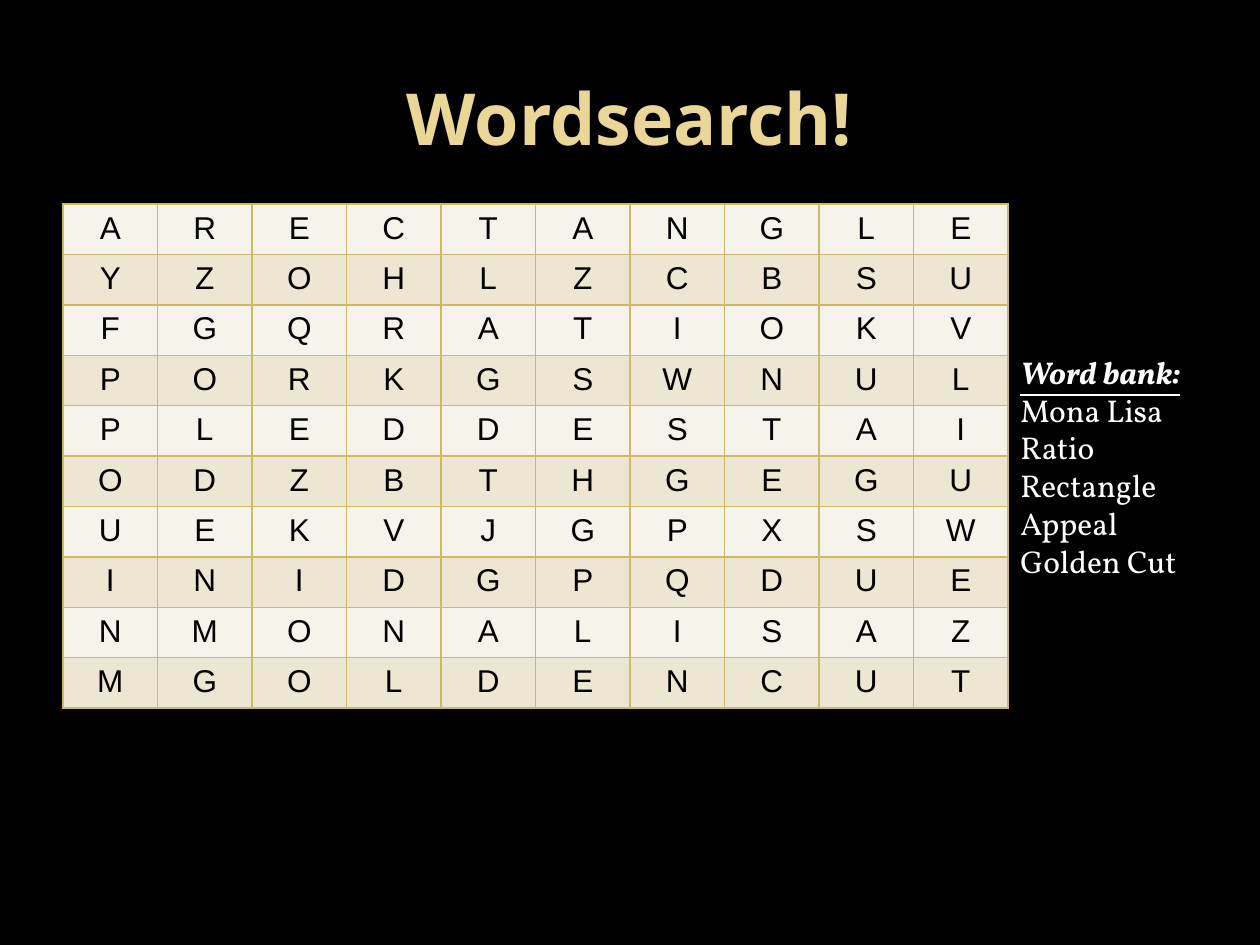
from dataclasses import dataclass

from lxml.etree import SubElement
from pptx import Presentation
from pptx.dml.color import RGBColor
from pptx.enum.text import MSO_ANCHOR as Anchor, MSO_AUTO_SIZE as AutoSize, PP_ALIGN as Align
from pptx.oxml.ns import qn
from pptx.util import Pt


@dataclass(frozen=True)
class Theme:
    background: str = "000000"
    title: str = "EAD696"
    text: str = "FFFFFF"
    letter: str = "000000"
    border: str = "CEB966"
    bands: tuple = ("F6F3EA", "EDE6D3")
    title_font: str = "Open Sans"
    text_font: str = "Vollkorn"
    letter_font: str = "Arial"
    title_size: int = 41
    body_size: int = 18
    border_width: int = 1


class SlideBuilder:
    def __init__(self, slide, theme):
        self.slide = slide
        self.theme = theme
        fill = slide.background.fill
        fill.solid()
        fill.fore_color.rgb = RGBColor.from_string(theme.background)

    def style(self, paragraph, name, size, color, emphasis=False):
        font = paragraph.font
        font.name = name
        font.size = Pt(size)
        font.color.rgb = RGBColor.from_string(color)
        font.bold = font.italic = font.underline = emphasis

    def title(self, text, left, top, width, height):
        theme = self.theme
        shape = self.slide.shapes.title
        shape.left, shape.top = Pt(left), Pt(top)
        shape.width, shape.height = Pt(width), Pt(height)
        frame = shape.text_frame
        frame.text = text
        frame.vertical_anchor = Anchor.MIDDLE
        paragraph = frame.paragraphs[0]
        paragraph.alignment = Align.CENTER
        self.style(paragraph, theme.title_font, theme.title_size, theme.title)
        paragraph.font.bold = True

    def border(self, cell):
        properties = cell._tc.get_or_add_tcPr()
        for position, side in enumerate(("lnL", "lnR", "lnT", "lnB")):
            line = SubElement(properties, qn(f"a:{side}"), w=str(Pt(self.theme.border_width)))
            fill = SubElement(line, qn("a:solidFill"))
            SubElement(fill, qn("a:srgbClr"), val=self.theme.border)
            properties.insert(position, line)

    def letter_grid(self, rows, left, top, cell_width, cell_height):
        theme = self.theme
        columns = len(rows[0])
        table = self.slide.shapes.add_table(
            len(rows), columns, Pt(left), Pt(top),
            Pt(columns * cell_width), Pt(len(rows) * cell_height),
        ).table
        table.first_row = False
        for row_index, letters in enumerate(rows):
            band = RGBColor.from_string(theme.bands[row_index % 2])
            for column_index, letter in enumerate(letters):
                cell = table.cell(row_index, column_index)
                cell.text = letter
                cell.fill.solid()
                cell.fill.fore_color.rgb = band
                paragraph = cell.text_frame.paragraphs[0]
                paragraph.alignment = Align.CENTER
                self.style(paragraph, theme.letter_font, theme.body_size, theme.letter)
                self.border(cell)

    def word_list(self, heading, words, left, top, width, height):
        theme = self.theme
        shape = self.slide.shapes.add_textbox(Pt(left), Pt(top), Pt(width), Pt(height))
        frame = shape.text_frame
        frame.word_wrap = True
        frame.auto_size = AutoSize.SHAPE_TO_FIT_TEXT
        frame.text = "\n".join([heading, *words])
        for index, paragraph in enumerate(frame.paragraphs):
            self.style(paragraph, theme.text_font, theme.body_size, theme.text, emphasis=index == 0)


LETTER_ROWS = (
    "ARECTANGLE",
    "YZOHLZCBSU",
    "FGQRATIOKV",
    "PORKGSWNUL",
    "PLEDDESTAI",
    "ODZBTHGEGU",
    "UEKVJGPXSW",
    "INIDGPQDUE",
    "NMONALISAZ",
    "MGOLDENCUT",
)
WORDS = ("Mona Lisa", "Ratio", "Rectangle", "Appeal", "Golden Cut")


def main():
    presentation = Presentation()
    presentation.slide_width, presentation.slide_height = Pt(720), Pt(540)
    title_only = presentation.slide_layouts[5]
    builder = SlideBuilder(presentation.slides.add_slide(title_only), Theme())
    builder.title("Wordsearch!", 36, 21.6, 648, 90)
    builder.letter_grid(LETTER_ROWS, 36, 116.64, 54, 28.8)
    builder.word_list("Word bank:", WORDS, 576, 198, 414, 138.24)
    presentation.save("out.pptx")


if __name__ == "__main__":
    main()
